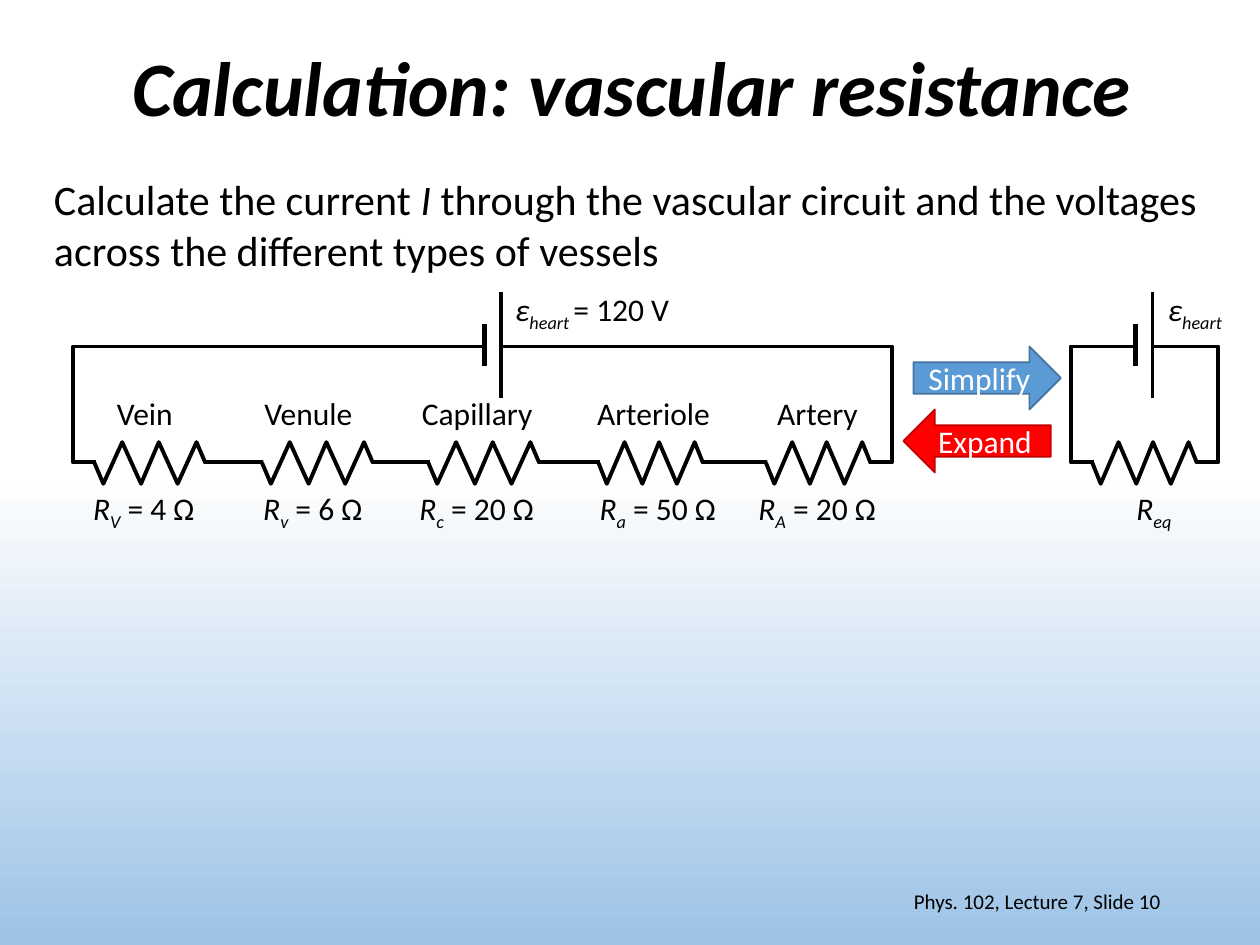
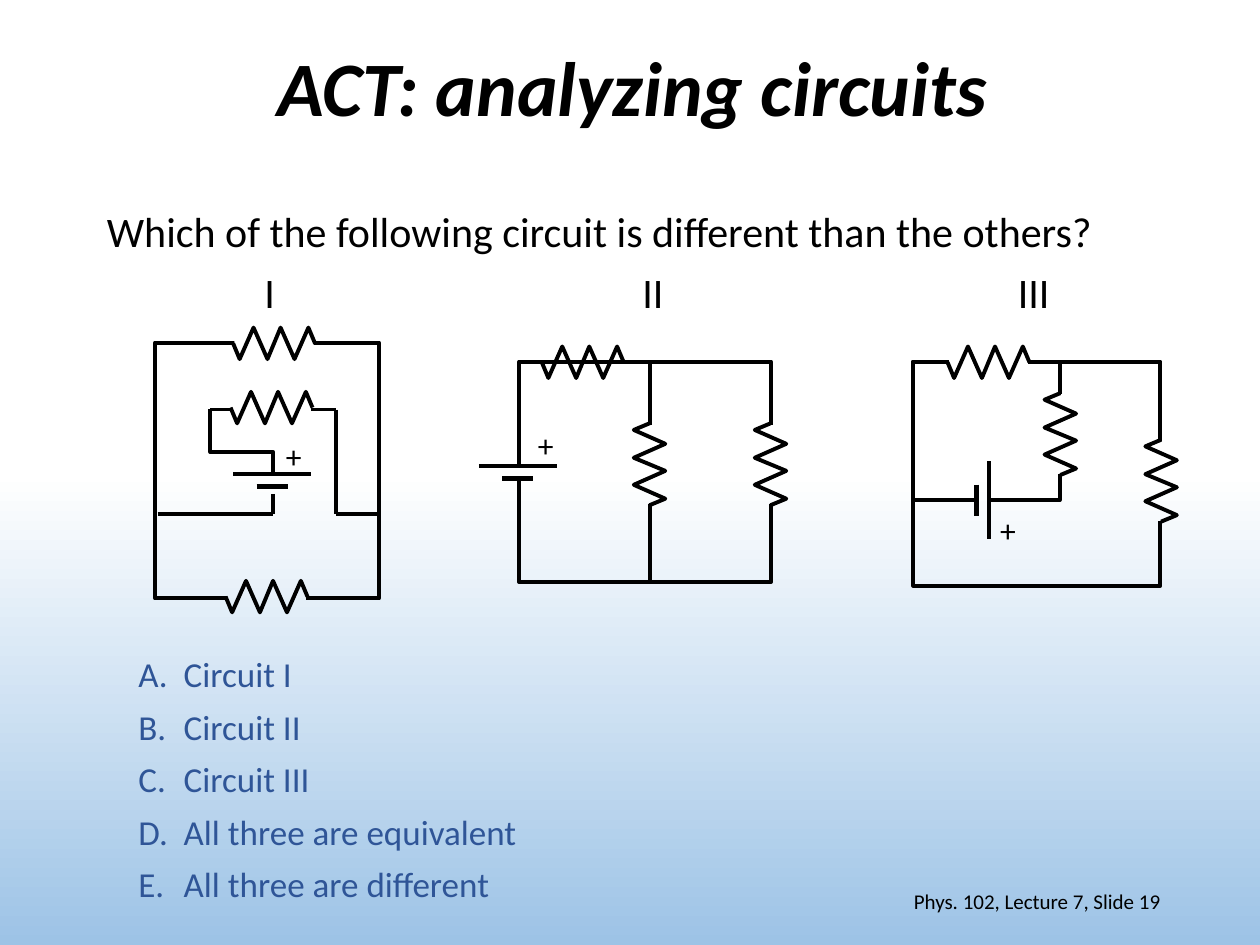
from lxml import etree
from pptx import Presentation
from pptx.dml.color import RGBColor
from pptx.enum.shapes import MSO_CONNECTOR, MSO_SHAPE
from pptx.enum.text import MSO_ANCHOR, MSO_AUTO_SIZE, PP_ALIGN
from pptx.oxml.ns import qn
from pptx.util import Inches, Pt

FONT = "Calibri"
BLACK, WHITE, SKY, ANSWER = "000000", "FFFFFF", "9DC3E6", "2F5597"
WIRE, PLATE = 2.25, 3
rgb = RGBColor.from_string


def style_shape(shape, fill=None, line=None, width=WIRE):
    shape.shadow.inherit = False
    if fill:
        shape.fill.solid()
        shape.fill.fore_color.rgb = rgb(fill)
    else:
        shape.fill.background()
    if line:
        shape.line.color.rgb = rgb(line)
        shape.line.width = Pt(width)
    else:
        shape.line.fill.background()


def write(tf, runs, size, color=BLACK, align=PP_ALIGN.LEFT, bold=False, p=None):
    p = p or tf.paragraphs[0]
    p.alignment = align
    for text, kind in runs:
        r = p.add_run()
        r.text = text
        look = {"name": FONT, "size": Pt(size), "bold": bold, "italic": kind != ""}
        for key, value in look.items():
            setattr(r.font, key, value)
        r.font.color.rgb = rgb(color)
        if kind == "sub":
            r.font._element.set("baseline", "-25000")
    return p


prs = Presentation()
prs.slide_width, prs.slide_height = Inches(10), Inches(7.5)

slides = []
for title, number in [("Calculation: vascular resistance", 10), ("ACT: analyzing circuits", 19)]:
    s = prs.slides.add_slide(prs.slide_layouts[5])
    slides.append(s)
    fill = s.background.fill
    fill.gradient()
    fill.gradient_angle = 270
    for stop, position, color in zip(fill.gradient_stops, (0.5, 1), (WHITE, SKY)):
        stop.position = position
        stop.color.rgb = rgb(color)

    sp = s.shapes.title
    sp.left, sp.top, sp.width, sp.height = map(Inches, (0.71, 0, 8.62, 1.45))
    sp.text_frame.vertical_anchor = MSO_ANCHOR.MIDDLE
    sp.text_frame.auto_size = MSO_AUTO_SIZE.NONE
    p = write(sp.text_frame, [(title, "i")], 44, align=PP_ALIGN.CENTER, bold=True)
    p.line_spacing = 0.9

    footer = s.shapes.add_textbox(*map(Inches, (7.06, 6.95, 2.25, 0.4)))
    footer.text_frame.word_wrap = True
    footer.text_frame.vertical_anchor = MSO_ANCHOR.MIDDLE
    write(footer.text_frame, [(f"Phys. 102, Lecture 7, Slide {number}", "")], 12, align=PP_ALIGN.RIGHT)

vascular, act = slides

loops = [
    (vascular, 0.58, 2.75, 6.5, 0.92, None),
    (vascular, 8.5, 2.75, 1.17, 0.92, None),
    (act, 1.23, 2.72, 1.78, 2.03, None),
    (act, 4.12, 2.87, 1.04, 1.75, None),
    (act, 5.16, 2.87, 0.96, 1.75, None),
    (act, 7.25, 2.87, 1.96, 1.78, None),
    (act, 7.25, 2.87, 1.16, 1.1, WHITE),
]
for s, x, y, w, h, fill in loops:
    loop = s.shapes.add_shape(MSO_SHAPE.RECTANGLE, *map(Inches, (x, y, w, h)))
    style_shape(loop, fill, BLACK)

lines = [
    (act, 1.67, 3.25, 2.67, 3.25, WIRE),
    (act, 2.67, 3.25, 2.67, 4.08, WIRE),
    (act, 2.17, 3.92, 2.17, 4.08, WIRE),
    (act, 1.25, 4.08, 2.17, 4.08, WIRE),
    (act, 2.67, 4.08, 3, 4.08, WIRE),
]
masks = []

batteries = [
    (vascular, 3.91, 2.74, 0.42, True),
    (vascular, 9.08, 2.74, 0.42, True),
    (act, 2.16, 3.81, 0.31, False),
    (act, 4.11, 3.75, 0.31, False),
    (act, 7.8, 3.97, 0.31, True),
]
for s, x, y, half, upright in batteries:
    gap, short = 0.16 * half, 0.4 * half
    w, h = (0.38 * half, 2.4 * half) if upright else (2.4 * half, 0.38 * half)
    masks.append((s, x - w / 2, y - h / 2, w, h, 0))
    if upright:
        lines.append((s, x + gap, y - half, x + gap, y + half, WIRE))
        lines.append((s, x - gap, y - short, x - gap, y + short, PLATE))
    else:
        lines.append((s, x - half, y - gap, x + half, y - gap, WIRE))
        lines.append((s, x - short, y + gap, x + short, y + gap, PLATE))

resistors = [(vascular, x, 3.51, 0.88, 0.33, 0) for x in (0.75, 2.08, 3.4)]
resistors += [(vascular, x, 3.51, 0.83, 0.33, 0) for x in (4.75, 6.08, 8.67)]
resistors += [(act, x, y, 0.65, 0.25, 0) for x, y in [(1.85, 2.6), (1.83, 3.11), (1.79, 4.61), (4.3, 2.75), (7.52, 2.75)]]
resistors += [(act, x, y, 0.65, 0.25, 270) for x, y in [(4.83, 3.56), (5.79, 3.56), (8.09, 3.32), (8.89, 3.69)]]
uncovered = (act, 4.3, 2.75, 0.65, 0.25, 0)
for resistor in resistors:
    if resistor != uncovered:
        s, x, y, w, h, turn = resistor
        masks.append((s, x + 0.01, y - 0.01, w - 0.02, h + 0.02, turn))

connectors = []
for s, x1, y1, x2, y2, width in lines:
    c = s.shapes.add_connector(MSO_CONNECTOR.STRAIGHT, *map(Inches, (x1, y1, x2, y2)))
    connectors.append((c, width))

elbow = act.shapes.add_connector(MSO_CONNECTOR.ELBOW, *map(Inches, (1.67, 3.75, 2.17, 3.25)))
elbow.element.spPr.find(qn("a:xfrm")).set("rot", "16200000")
guides = elbow.element.spPr.find(qn("a:prstGeom")).find(qn("a:avLst"))
etree.SubElement(guides, qn("a:gd"), name="adj1", fmla="val 32100")
connectors.append((elbow, WIRE))

for c, width in connectors:
    c.line.color.rgb = rgb(BLACK)
    c.line.width = Pt(width)
    etree.SubElement(c.element.spPr, qn("a:effectLst"))

for s, x, y, w, h, turn in masks:
    mask = s.shapes.add_shape(MSO_SHAPE.RECTANGLE, *map(Inches, (x, y, w, h)))
    mask.rotation = turn
    mask.shadow.inherit = False
    mask.line.fill.background()
    mask.element.set("useBgFill", "1")

for c, width in connectors:
    tree = c.element.getparent()
    if c.line.width == Pt(PLATE) or c.top != Inches(3.25):
        tree.append(c.element)

across = (0, 0.08, 0.25, 0.42, 0.58, 0.75, 0.92, 1)
down = (0.5, 1, 0, 1, 0, 1, 0, 0.5)
for s, x, y, w, h, turn in resistors:
    points = [(Inches(x + w * a), Inches(y + h * d)) for a, d in zip(across, down)]
    zigzag = s.shapes.build_freeform(*points[0])
    zigzag.add_line_segments(points[1:], close=False)
    sp = zigzag.convert_to_shape()
    sp.rotation = turn
    style_shape(sp, line=BLACK)

labels = [
    (vascular, 3.99, 2.25, 1.51, 18, [("ε", "i"), ("heart ", "sub"), ("= 120 V", "")]),
    (vascular, 9.17, 2.25, 0.68, 18, [("ε", "i"), ("heart", "sub")]),
    (vascular, 8.92, 3.83, 0.5, 18, [("R", "i"), ("eq", "sub")]),
    (act, 0.75, 1.58, 8.1, 24, [("Which of the following circuit is different than the others?", "")]),
]
vessels = [
    ("Vein", 0.83, 0.65, "V", 4, 0.64, 1.02),
    ("Venule", 2, 0.91, "v", 6, 1.99, 1.01),
    ("Capillary", 3.25, 1.09, "c", 20, 3.23, 1.13),
    ("Arteriole", 4.64, 1.11, "a", 50, 4.66, 1.15),
    ("Artery", 6.07, 0.85, "A", 20, 5.92, 1.16),
]
for name, x, w, symbol, ohms, value_x, value_w in vessels:
    labels.append((vascular, x, 3.08, w, 18, [(name, "")]))
    labels.append((vascular, value_x, 3.83, value_w, 18, [("R", "i"), (symbol, "sub"), (f" = {ohms} Ω", "")]))
for numeral, x, w in [("I", 2, 0.29), ("II", 5, 0.37), ("III", 7.98, 0.45)]:
    labels.append((act, x, 2.07, w, 24, [(numeral, "")]))
for x, y in [(2.17, 3.42), (4.17, 3.33), (7.84, 4.01)]:
    labels.append((act, x, y, 0.33, 18, [("+", "")]))

for s, x, y, w, size, runs in labels:
    box = s.shapes.add_textbox(*map(Inches, (x, y, w, 0.5 if size == 24 else 0.4)))
    box.text_frame.word_wrap = False
    box.text_frame.auto_size = MSO_AUTO_SIZE.SHAPE_TO_FIT_TEXT
    write(box.text_frame, runs, size)

task = vascular.shapes.add_textbox(*map(Inches, (0.33, 1.33, 9.42, 0.91)))
task.text_frame.word_wrap = True
write(task.text_frame, [
    ("Calculate the current ", ""),
    ("I", "i"),
    (" through the vascular circuit and the voltages across the different types of vessels", ""),
], 24)

arrows = [
    ("Simplify", MSO_SHAPE.RIGHT_ARROW, 7.25, 2.75, "5B9BD5", "43739E"),
    ("Expand", MSO_SHAPE.LEFT_ARROW, 7.17, 3.25, "FF0000", "C00000"),
]
for text, kind, x, y, fill, line in arrows:
    arrow = vascular.shapes.add_shape(kind, *map(Inches, (x, y, 1.17, 0.5)))
    style_shape(arrow, fill, line, 1)
    arrow.text_frame.vertical_anchor = MSO_ANCHOR.MIDDLE
    write(arrow.text_frame, [(text, "")], 18, WHITE, PP_ALIGN.CENTER)

answers = act.shapes.add_textbox(*map(Inches, (1, 5.13, 3.83, 2.12)))
tf = answers.text_frame
tf.word_wrap = True
choices = ["Circuit I", "Circuit II", "Circuit III", "All three are equivalent", "All three are different"]
for i, choice in enumerate(choices):
    p = tf.add_paragraph() if i else tf.paragraphs[0]
    write(tf, [(choice, "")], 20, ANSWER, p=p)
    p.space_after = Pt(6)
    pPr = p._p.get_or_add_pPr()
    pPr.set("marL", str(Inches(0.36)))
    pPr.set("indent", str(-Inches(0.36)))
    etree.SubElement(pPr, qn("a:buFont"), typeface="+mj-lt")
    etree.SubElement(pPr, qn("a:buAutoNum"), type="alphaUcPeriod")

prs.save("out.pptx")
